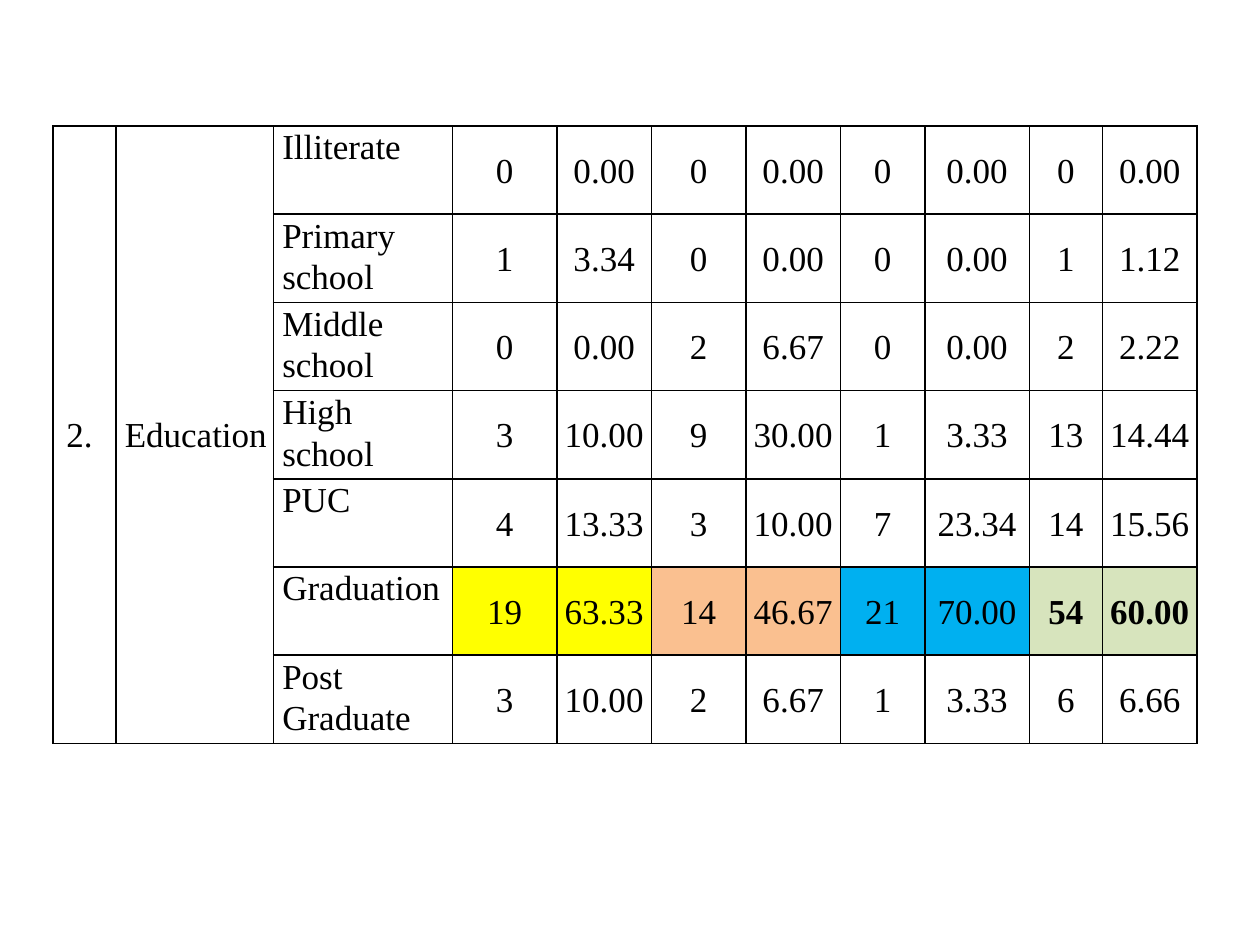
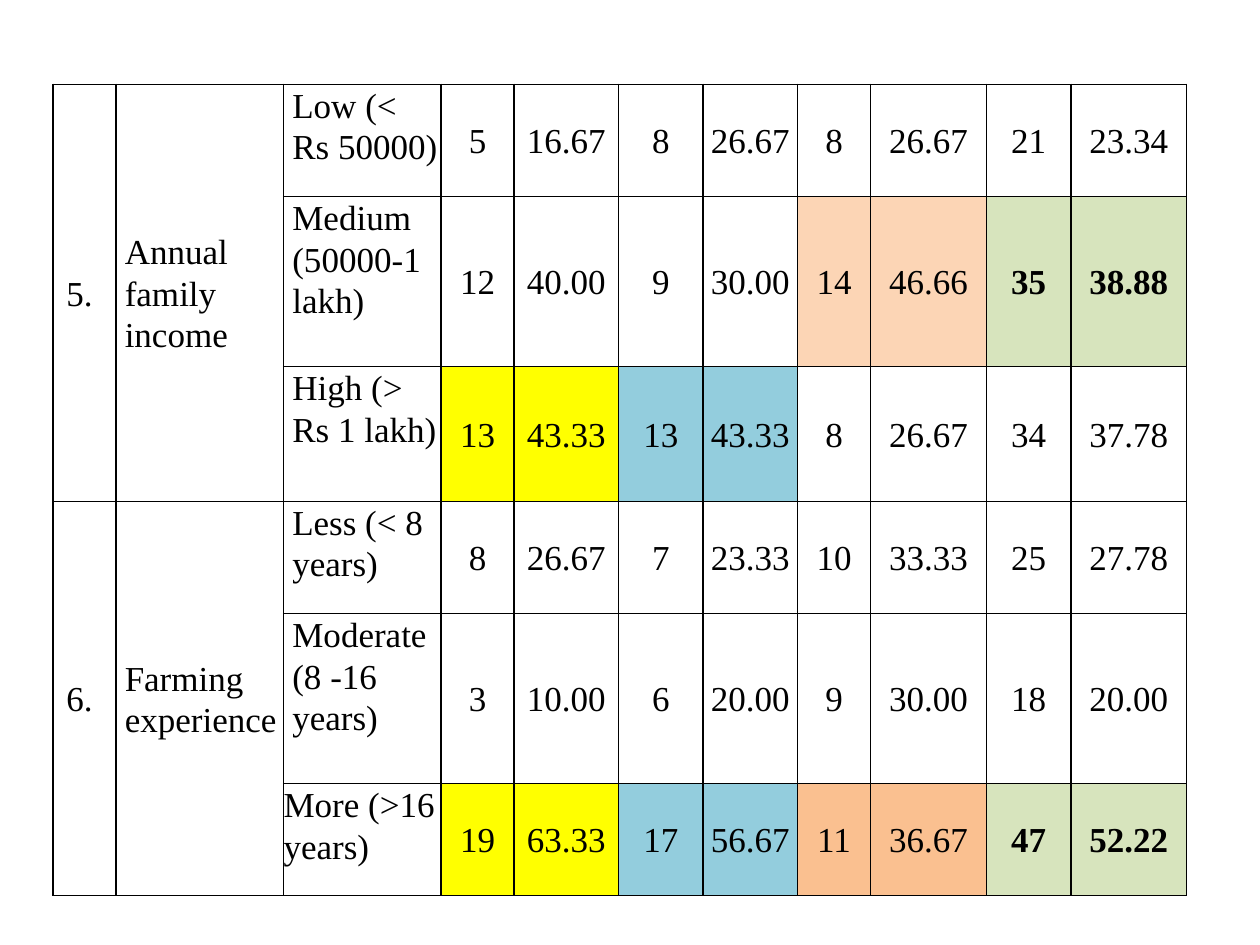
from lxml import etree
from pptx import Presentation
from pptx.dml.color import RGBColor
from pptx.enum.text import MSO_ANCHOR, PP_ALIGN
from pptx.oxml.ns import qn
from pptx.util import Inches, Pt

MIDDLE, TOP = MSO_ANCHOR.MIDDLE, MSO_ANCHOR.TOP
CENTER, LEFT = PP_ALIGN.CENTER, PP_ALIGN.LEFT
BLANK_LAYOUT = 6

BLACK = "000000"
YELLOW = "FFFF00"
ORANGE = "FAC090"
PEACH = "FCD5B5"
BLUE = "00B0F0"
TEAL = "93CDDD"
GREEN = "D7E4BD"
NO_FILLS = (None,) * 4

LABEL_INDENT = 0.07
NUMBER_INDENT = 0.02

# Each section: number, variable, rows.
# Each row: category, four count and percentage pairs, fill of each pair.
EDUCATION = [
    ("2. ", "Education", [
        ("Illiterate", "0 0.00 0 0.00 0 0.00 0 0.00", NO_FILLS),
        ("Primary school", "1 3.34 0 0.00 0 0.00 1 1.12", NO_FILLS),
        ("Middle school", "0 0.00 2 6.67 0 0.00 2 2.22", NO_FILLS),
        ("High school", "3 10.00 9 30.00 1 3.33 13 14.44", NO_FILLS),
        ("PUC", "4 13.33 3 10.00 7 23.34 14 15.56", NO_FILLS),
        ("Graduation", "19 63.33 14 46.67 21 70.00 54 60.00",
         (YELLOW, ORANGE, BLUE, GREEN)),
        ("Post Graduate", "3 10.00 2 6.67 1 3.33 6 6.66", NO_FILLS),
    ]),
]
INCOME_AND_EXPERIENCE = [
    ("5. ", "Annual family income", [
        ("Low (< Rs 50000)", "5 16.67 8 26.67 8 26.67 21 23.34", NO_FILLS),
        ("Medium (50000-1 lakh)", "12 40.00 9 30.00 14 46.66 35 38.88",
         (None, None, PEACH, GREEN)),
        ("High (> Rs 1 lakh)", "13 43.33 13 43.33 8 26.67 34 37.78",
         (YELLOW, TEAL, None, None)),
    ]),
    ("6. ", "Farming experience", [
        ("Less (< 8 years)", "8 26.67 7 23.33 10 33.33 25 27.78", NO_FILLS),
        ("Moderate (8 -16 years)", "3 10.00 6 20.00 9 30.00 18 20.00", NO_FILLS),
        ("More (>16 years)", "19 63.33 17 56.67 11 36.67 47 52.22",
         (YELLOW, TEAL, ORANGE, GREEN)),
    ]),
]
FLUSH_LABELS = {"More (>16 years)"}


def rgb(value):
    return RGBColor.from_string(value)


class Deck:
    font = "Times New Roman"
    size = Pt(20)
    border = Pt(1)
    left = Inches(0.42)

    def __init__(self):
        self.prs = Presentation()
        self.prs.slide_width = Inches(10)
        self.prs.slide_height = Inches(7.5)
        self.slide = None

    def new_slide(self):
        layout = self.prs.slide_layouts[BLANK_LAYOUT]
        self.slide = self.prs.slides.add_slide(layout)

    def frame_cell(self, cell, fill=None):
        """Draw the four borders, then the fill, which must follow them."""
        tc_pr = cell._tc.get_or_add_tcPr()
        for side in ("a:lnL", "a:lnR", "a:lnT", "a:lnB"):
            ln = etree.SubElement(tc_pr, qn(side), w=str(int(self.border)))
            solid = etree.SubElement(ln, qn("a:solidFill"))
            etree.SubElement(solid, qn("a:srgbClr"), val=BLACK)
        if fill:
            cell.fill.solid()
            cell.fill.fore_color.rgb = rgb(fill)
        else:
            cell.fill.background()

    def write_cell(self, cell, text, align, anchor, indent, bold=False):
        cell.margin_left = cell.margin_top = cell.margin_bottom = 0
        cell.margin_right = Inches(0.02)
        cell.vertical_anchor = anchor
        p = cell.text_frame.paragraphs[0]
        p.text = text
        p.alignment = align
        p.line_spacing = 1.07
        p.space_after = Pt(8)
        p._p.get_or_add_pPr().set("marL", str(int(Inches(indent))))
        font = p.runs[0].font
        font.name, font.size, font.bold = self.font, self.size, bold
        font.color.rgb = rgb(BLACK)

    def write_row(self, table, row, category, values, fills):
        indent = 0 if category in FLUSH_LABELS else LABEL_INDENT
        for col in range(3):
            self.frame_cell(table.cell(row, col))
        self.write_cell(table.cell(row, 2), category, LEFT, TOP, indent)
        for i, value in enumerate(values.split()):
            cell = table.cell(row, 3 + i)
            fill = fills[i // 2]
            self.frame_cell(cell, fill)
            self.write_cell(cell, value, CENTER, MIDDLE, NUMBER_INDENT,
                            bold=fill == GREEN)

    def frequency_table(self, top, widths, heights, sections):
        shape = self.slide.shapes.add_table(
            len(heights), len(widths), self.left, Inches(top),
            Inches(sum(widths)), Inches(sum(heights)))
        table = shape.table
        table.first_row = table.horz_banding = False
        for column, width in zip(table.columns, widths):
            column.width = Inches(width)
        for table_row, height in zip(table.rows, heights):
            table_row.height = Inches(height)

        row = 0
        for number, variable, rows in sections:
            first = row
            for category, values, fills in rows:
                self.write_row(table, row, category, values, fills)
                row += 1
            for col in (0, 1):
                table.cell(first, col).merge(table.cell(row - 1, col))
            self.write_cell(table.cell(first, 0), number, CENTER, MIDDLE, 0.01)
            self.write_cell(table.cell(first, 1), variable, LEFT, MIDDLE,
                            LABEL_INDENT)


def main():
    deck = Deck()
    deck.new_slide()
    deck.frequency_table(
        1, [0.5, 1.25, 1.42, 0.83, 0.75, 0.75, 0.75, 0.67, 0.83, 0.58, 0.75],
        [0.7] * 7, EDUCATION)
    deck.new_slide()
    deck.frequency_table(
        0.67, [0.5, 1.33, 1.25, 0.58, 0.83, 0.67, 0.75, 0.58, 0.92, 0.67, 0.92],
        [0.89, 1.35, 1.07, 0.89, 1.35, 0.89], INCOME_AND_EXPERIENCE)
    deck.prs.save("out.pptx")


if __name__ == "__main__":
    main()
